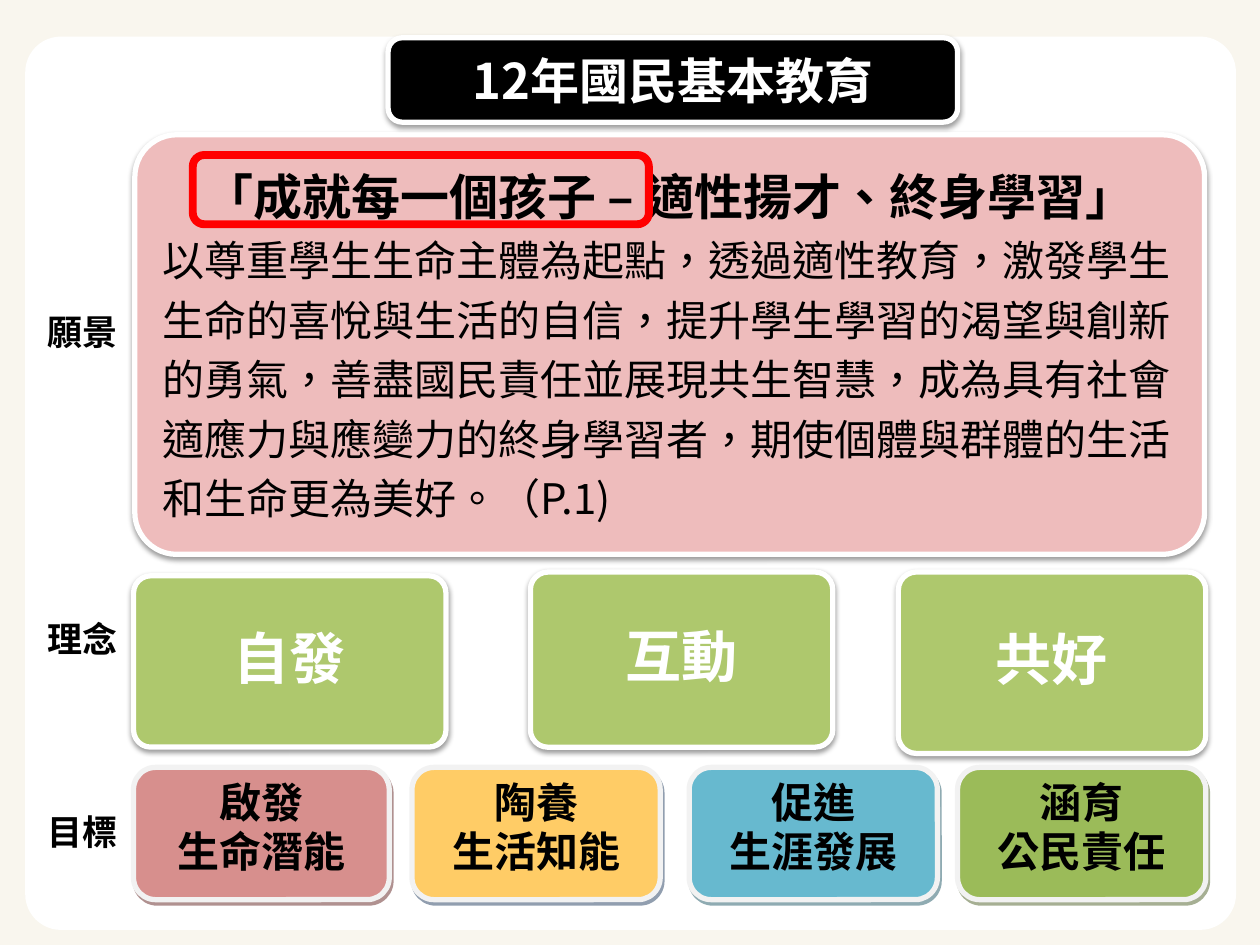
from lxml.etree import SubElement
from pptx import Presentation
from pptx.dml.color import RGBColor
from pptx.enum.shapes import MSO_SHAPE
from pptx.enum.text import MSO_ANCHOR, PP_ALIGN
from pptx.oxml.ns import qn
from pptx.util import Inches, Pt

BLACK = RGBColor(0x00, 0x00, 0x00)
WHITE = RGBColor(0xFF, 0xFF, 0xFF)
CREAM = RGBColor(0xF6, 0xF0, 0xE1)
PINK = RGBColor(0xEE, 0xBC, 0xBC)
LIME = RGBColor(0xAE, 0xC8, 0x6D)
PALE_GRAY = RGBColor(0xF2, 0xF2, 0xF2)
RED = RGBColor(0xFF, 0x00, 0x00)
ROSE = RGBColor(0xD7, 0x8F, 0x8D)
AMBER = RGBColor(0xFF, 0xCC, 0x66)
TEAL = RGBColor(0x67, 0xB9, 0xCF)
GREEN = RGBColor(0x9B, 0xBB, 0x59)
DARK_RED = RGBColor(0x62, 0x24, 0x23)
DARK_BLUE = RGBColor(0x24, 0x3F, 0x60)
DARK_TEAL = RGBColor(0x20, 0x58, 0x67)
DARK_GREEN = RGBColor(0x4E, 0x61, 0x28)

# Shadow styles: opacity %, blur pt, distance pt, direction in degrees
SOFT = (38, 3.1, 1.6, 90)
HARD = (50, 0, 2.2, 63)


class SlideBuilder:
    font = "Noto Sans CJK SC"

    def __init__(self, slide):
        self.slide = slide

    def box(self, x, y, w, h, fill=None, line=None, line_width=3, radius=0.167):
        kind = MSO_SHAPE.ROUNDED_RECTANGLE if radius else MSO_SHAPE.RECTANGLE
        sp = self.slide.shapes.add_shape(kind, Inches(x), Inches(y), Inches(w), Inches(h))
        sp.shadow.inherit = False
        if radius:
            sp.adjustments[0] = radius
        if fill is None:
            sp.fill.background()
        else:
            sp.fill.solid()
            sp.fill.fore_color.rgb = fill
        if line is None:
            sp.line.fill.background()
        else:
            sp.line.color.rgb = line
            sp.line.width = Pt(line_width)
        return sp

    def fade(self, sp, percent):
        """Make the solid fill partly transparent."""
        color = sp.fill._xPr.find(qn("a:solidFill"))[0]
        SubElement(color, qn("a:alpha"), val=str(percent * 1000))

    def shadow(self, sp, color, style):
        opacity, blur, distance, angle = style
        effects = sp._element.spPr.find(qn("a:effectLst"))
        outer = SubElement(effects, qn("a:outerShdw"), blurRad=str(Pt(blur)),
                           dist=str(Pt(distance)), dir=str(angle * 60000),
                           algn="ctr", rotWithShape="0")
        clr = SubElement(outer, qn("a:srgbClr"), val=str(color))
        SubElement(clr, qn("a:alpha"), val=str(opacity * 1000))

    def frame(self, sp, anchor=MSO_ANCHOR.MIDDLE, inset=None):
        tf = sp.text_frame
        tf.word_wrap = True
        tf.vertical_anchor = anchor
        if inset is not None:
            tf.margin_left = tf.margin_right = Inches(inset)
            tf.margin_top = tf.margin_bottom = Inches(inset)
        return tf

    def style(self, p, size, color=BLACK, bold=True, align=PP_ALIGN.CENTER, spacing=None):
        p.alignment = align
        if spacing is not None:
            p.line_spacing = spacing
        p.font.size = Pt(size)
        p.font.bold = bold
        p.font.color.rgb = color
        p.font.name = self.font
        props = p._p.pPr.find(qn("a:defRPr"))
        props.set("lang", "zh-TW")
        SubElement(props, qn("a:ea"), typeface=self.font)

    def backdrop(self):
        self.fade(self.box(0, 0, 10, 7.5, CREAM, radius=0), 56)
        self.box(0.2, 0.29, 9.61, 7.09, WHITE, radius=0.04)

    def title(self, text):
        sp = self.box(3.08, 0.3, 4.52, 0.67, BLACK, WHITE)
        self.shadow(sp, BLACK, SOFT)
        p = self.frame(sp).paragraphs[0]
        p.text = text
        self.style(p, 28, WHITE)

    def vision(self, heading, body):
        sp = self.box(1.07, 1.07, 8.49, 3.33, PINK, WHITE, radius=0.1)
        self.shadow(sp, BLACK, SOFT)
        tf = self.frame(sp, inset=0.12)
        p = tf.paragraphs[0]
        p.text = heading
        self.style(p, 28, spacing=Pt(34))
        p = tf.add_paragraph()
        p.text = body
        self.style(p, 24, bold=False, align=PP_ALIGN.LEFT, spacing=Pt(34))

    def idea(self, x, y, w, h, text):
        sp = self.box(x, y, w, h, LIME, WHITE, radius=0.1)
        self.shadow(sp, BLACK, SOFT)
        p = self.frame(sp, inset=0.13).paragraphs[0]
        p.text = text
        self.style(p, 32, WHITE, spacing=0.9)

    def goal(self, x, w, fill, shade, lines):
        sp = self.box(x, 6.09, w, 1.05, fill, PALE_GRAY)
        self.shadow(sp, shade, HARD)
        tf = self.frame(sp, MSO_ANCHOR.TOP)
        for i, text in enumerate(lines):
            p = tf.add_paragraph() if i else tf.paragraphs[0]
            p.text = text
            self.style(p, 24, spacing=0.96)

    def label(self, center_y, text):
        sp = self.slide.shapes.add_textbox(Inches(0.28), Inches(center_y - 0.25),
                                           Inches(0.9), Inches(0.5))
        p = self.frame(sp).paragraphs[0]
        p.text = text
        self.style(p, 20, align=PP_ALIGN.LEFT)


def main():
    prs = Presentation()
    prs.slide_width, prs.slide_height = Inches(10), Inches(7.5)
    s = SlideBuilder(prs.slides.add_slide(prs.slide_layouts[6]))

    s.backdrop()
    s.vision(
        "「成就每一個孩子 – 適性揚才、終身學習」",
        "以尊重學生生命主體為起點，透過適性教育，激發學生生命的喜悅與生活的自信，"
        "提升學生學習的渴望與創新的勇氣，善盡國民責任並展現共生智慧，"
        "成為具有社會適應力與應變力的終身學習者，"
        "期使個體與群體的生活和生命更為美好。（P.1)")

    for idea in [(1.06, 4.57, 2.48, 1.36, "自發"),
                 (4.21, 4.54, 2.4, 1.39, "互動"),
                 (7.13, 4.54, 2.44, 1.44, "共好")]:
        s.idea(*idea)

    for center_y, text in [(2.63, "願景"), (5.07, "理念"), (6.6, "目標")]:
        s.label(center_y, text)

    for goal in [(1.06, 2.03, ROSE, DARK_RED, ("啟發", "生命潛能")),
                 (3.27, 1.97, AMBER, DARK_BLUE, ("陶養", "生活知能")),
                 (5.47, 1.97, TEAL, DARK_TEAL, ("促進", "生涯發展")),
                 (7.6, 1.97, GREEN, DARK_GREEN, ("涵育", "公民責任"))]:
        s.goal(*goal)

    s.title("12年國民基本教育")
    s.box(1.53, 1.23, 3.62, 0.55, line=RED, line_width=4.5)
    prs.save("out.pptx")


if __name__ == "__main__":
    main()
